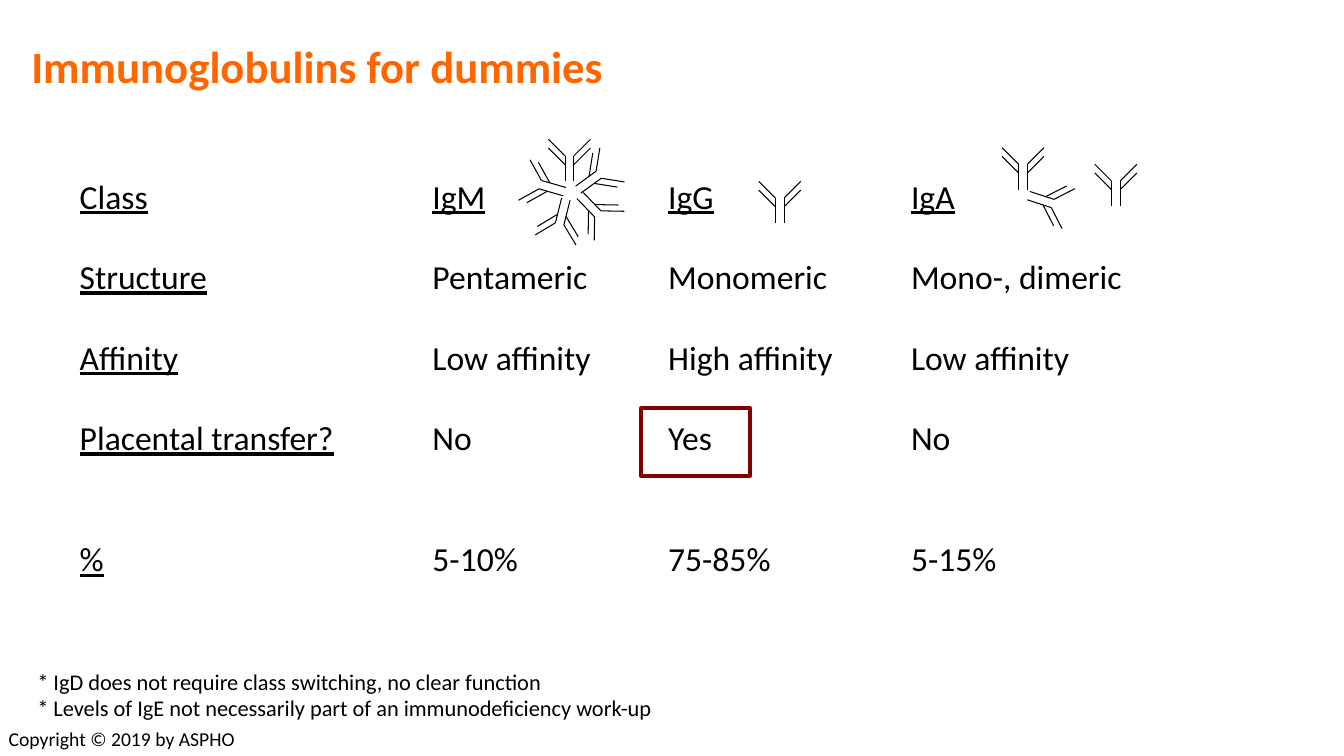
"""Build the slide that compares the immunoglobulin classes."""
from math import cos, radians, sin

from lxml.etree import SubElement
from pptx import Presentation
from pptx.dml.color import RGBColor
from pptx.enum.shapes import MSO_CONNECTOR, MSO_SHAPE
from pptx.enum.text import MSO_ANCHOR, PP_ALIGN
from pptx.oxml.ns import qn
from pptx.util import Cm, Pt

COLORS = {"title": "FF6600", "text": "000000", "antibody": "000000", "highlight": "800000"}
FONT = "Calibri"

TITLE = "Immunoglobulins for dummies"
FOOTNOTES = [
    "* IgD does not require class switching, no clear function",
    "* Levels of IgE not necessarily part of an immunodeficiency work-up",
]
COPYRIGHT = "Copyright © 2019 by ASPHO"

COLUMNS = [
    ["Class", "Structure", "Affinity", "Placental transfer?", "%"],
    ["IgM", "Pentameric", "Low affinity", "No", "5-10%"],
    ["IgG", "Monomeric", "High affinity", "Yes", "75-85%"],
    ["IgA", "Mono-, dimeric", "Low affinity", "No", "5-15%"],
]
COLUMN_PLACES = [(1.76, 7.44), (10.65, 4.55), (16.59, 4.72), (22.71, 5.87)]
COLUMN_TOP, COLUMN_HEIGHT = 4.3, 10.52
ROW_GAPS = [0, 28.7, 28.7, 28.7, 57.7]

ANTIBODY_GROUPS = {
    "IgM pentamer": [(14.35, 4.57, 0), (14.57, 4.78, 54), (14.62, 4.93, 136),
                     (14.26, 5.02, 194), (14.23, 4.83, 286)],
    "IgG monomer": [(19.65, 5.63, 0)],
    "IgA dimer": [(25.78, 4.78, 0), (25.92, 4.93, 108)],
    "IgA monomer": [(28.12, 5.2, 0)],
}
CHAINS = [
    ((0.11, 0), (0.11, 0.64)),
    ((0.11, 0.64), (0.53, 1.06)),
    ((0.11, 0.42), (0.53, 0.84)),
]


def color(name):
    return RGBColor.from_string(COLORS[name])


def add_text(slide, place, lines, size, color_name="text"):
    text_box = slide.shapes.add_textbox(*[Cm(length) for length in place])
    text_frame = text_box.text_frame
    text_frame.word_wrap = True
    text_frame.text = "\n".join(lines)
    for paragraph in text_frame.paragraphs:
        paragraph.alignment = PP_ALIGN.LEFT
        for run in paragraph.runs:
            run.font.name = FONT
            run.font.size = Pt(size)
            run.font.color.rgb = color(color_name)
    return text_frame


def add_title(slide):
    text_frame = add_text(slide, (0.54, 0.81, 32.56, 1.85), [TITLE], 32, "title")
    text_frame.vertical_anchor = MSO_ANCHOR.MIDDLE
    paragraph = text_frame.paragraphs[0]
    paragraph.line_spacing = 0.9
    paragraph.runs[0].font.bold = True


def add_columns(slide):
    for column, (lines, (left, width)) in enumerate(zip(COLUMNS, COLUMN_PLACES)):
        place = (left, COLUMN_TOP, width, COLUMN_HEIGHT)
        text_frame = add_text(slide, place, lines, 24)
        for row, paragraph in enumerate(text_frame.paragraphs):
            paragraph.space_before = Pt(ROW_GAPS[row])
            paragraph.runs[0].font.underline = row == 0 or column == 0


def add_antibody(group, foot_x, foot_y, turn):
    cosine, sine = cos(radians(turn)), sin(radians(turn))

    def locate(across, up):
        return (Cm(foot_x + across * cosine + up * sine),
                Cm(foot_y + across * sine - up * cosine))

    for side in (-1, 1):
        for (start_across, start_up), (end_across, end_up) in CHAINS:
            connector = group.shapes.add_connector(
                MSO_CONNECTOR.STRAIGHT,
                *locate(side * start_across, start_up),
                *locate(side * end_across, end_up))
            connector.line.color.rgb = color("antibody")
            connector.line.width = Pt(0.75)
            SubElement(connector.element.spPr, qn("a:effectLst"))


def add_highlight(slide):
    rectangle = slide.shapes.add_shape(
        MSO_SHAPE.RECTANGLE, Cm(16.16), Cm(10.29), Cm(2.74), Cm(1.7))
    rectangle.shadow.inherit = False
    rectangle.fill.background()
    rectangle.line.color.rgb = color("highlight")
    rectangle.line.width = Pt(3)


def add_copyright(slide):
    text_frame = add_text(slide, (0, 18.19, 6.27, 0.86), [COPYRIGHT], 14)
    text_frame.margin_left = Cm(0.22)


def main():
    presentation = Presentation()
    presentation.slide_width, presentation.slide_height = Cm(33.87), Cm(19.05)
    slide = presentation.slides.add_slide(presentation.slide_layouts[6])
    add_title(slide)
    add_columns(slide)
    for antibodies in ANTIBODY_GROUPS.values():
        group = slide.shapes.add_group_shape()
        for antibody in antibodies:
            add_antibody(group, *antibody)
    add_text(slide, (0.69, 16.7, 22.81, 1.63), FOOTNOTES, 16)
    add_highlight(slide)
    add_copyright(slide)
    presentation.save("out.pptx")


if __name__ == "__main__":
    main()
